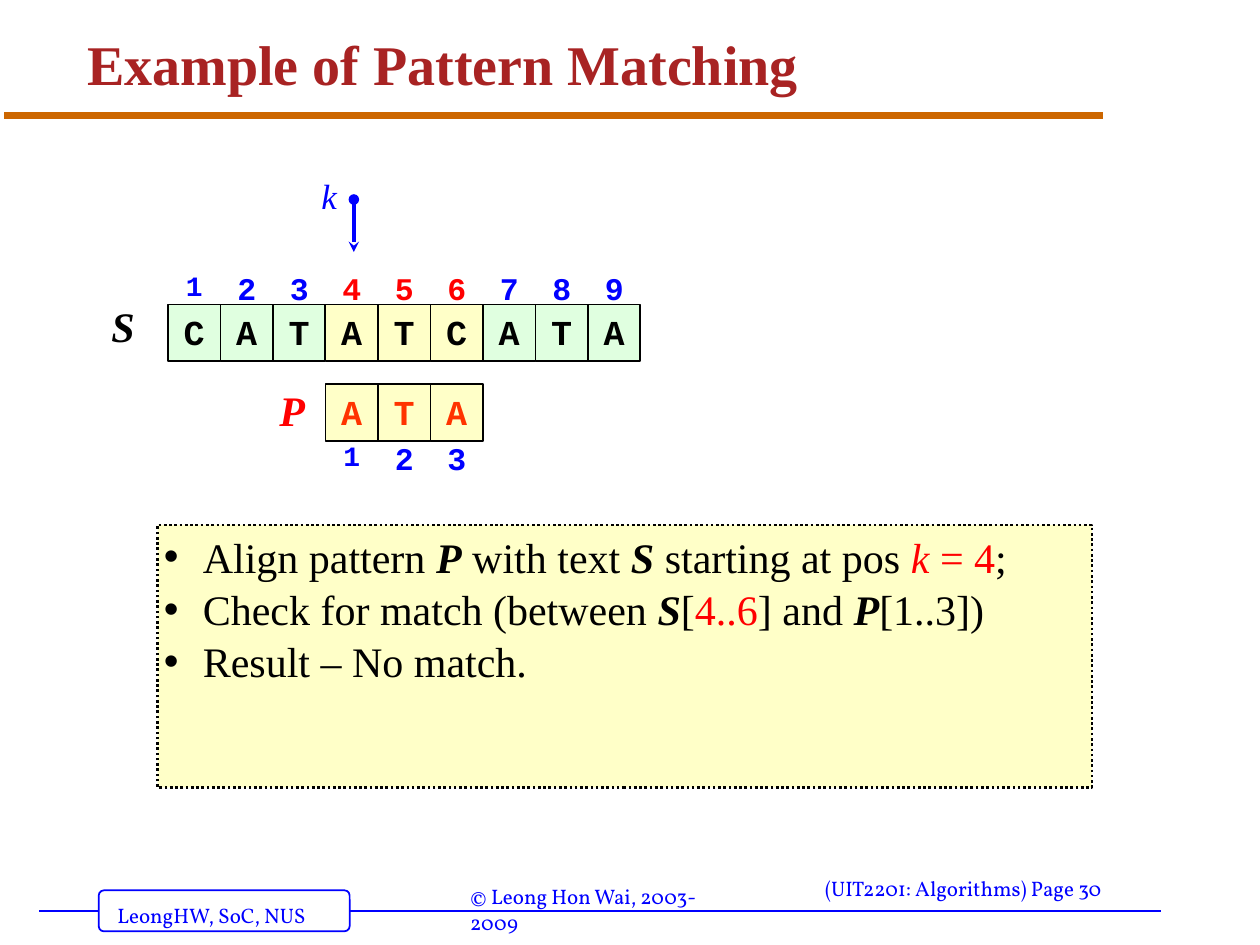
from lxml.etree import SubElement
from pptx import Presentation
from pptx.dml.color import RGBColor
from pptx.enum.dml import MSO_LINE
from pptx.enum.shapes import MSO_CONNECTOR, MSO_SHAPE
from pptx.enum.text import MSO_ANCHOR, MSO_AUTO_SIZE, PP_ALIGN
from pptx.oxml.ns import qn
from pptx.util import Inches, Pt

BLACK = RGBColor(0x00, 0x00, 0x00)
WHITE = RGBColor(0xFF, 0xFF, 0xFF)
BLUE = RGBColor(0x00, 0x00, 0xFF)
RED = RGBColor(0xFF, 0x00, 0x00)
ORANGE = RGBColor(0xFF, 0x33, 0x00)
BROWN = RGBColor(0xCC, 0x66, 0x00)
MAROON = RGBColor(0xA8, 0x23, 0x23)
CREAM = RGBColor(0xFF, 0xFF, 0xC8)
MINT = RGBColor(0xE0, 0xFF, 0xE0)

SERIF, MONO, FOOT = "Times New Roman", "Courier New", "Vollkorn"
COLS, ROWS = 120, 90  # grid of the whole slide
CELL = 5  # columns per letter

# Run styles: b = bold, i = italic, r = red
POINTS = [
    [("Align pattern ", ""), ("P", "bi"), (" with text ", ""), ("S", "bi"),
     (" starting at pos ", ""), ("k ", "ir"), ("= 4", "r"), (";", "")],
    [("Check for match (between ", ""), ("S", "bi"), ("[", ""), ("4..6", "r"),
     ("] and ", ""), ("P", "bi"), ("[1..3])", "")],
    [("Result – No match.", "")],
]


class Page:
    def __init__(self, deck):
        self.wide, self.high = deck.slide_width, deck.slide_height
        self.slide = deck.slides.add_slide(deck.slide_layouts[1])
        self.shapes = self.slide.shapes

    def spot(self, x, y):
        return round(x * self.wide / COLS), round(y * self.high / ROWS)

    def area(self, x, y, w, h):
        return self.spot(x, y) + self.spot(w, h)

    def place(self, shape, *box):
        shape.left, shape.top, shape.width, shape.height = self.area(*box)

    def inset(self, frame, side, top=0.05):
        frame.margin_left = frame.margin_right = Inches(side)
        frame.margin_top = frame.margin_bottom = Inches(top)
        frame.auto_size = MSO_AUTO_SIZE.NONE
        frame.vertical_anchor = MSO_ANCHOR.TOP

    def style(self, font, face, size, color, bold=False, slant=False):
        font.name, font.size = face, Pt(size)
        font.bold, font.italic = bold, slant
        font.color.rgb = color

    def paint(self, shape, fill, edge, width):
        shape.fill.solid()
        shape.fill.fore_color.rgb = fill
        shape.line.color.rgb = edge
        shape.line.width = Pt(width)

    def letter(self, shape, text, *look, side=0.05, align=PP_ALIGN.LEFT):
        """Set one styled paragraph in a shape."""
        frame = shape.text_frame
        self.inset(frame, side)
        frame.word_wrap = True
        para = frame.paragraphs[0]
        para.text, para.alignment = text, align
        self.style(para.font, *look)

    def title(self, text, *box):
        shape = self.shapes.title
        self.place(shape, *box)
        self.letter(shape, text, SERIF, 32, MAROON, True, side=0.1)
        shape.text_frame.vertical_anchor = MSO_ANCHOR.BOTTOM
        shape.text_frame.paragraphs[0].line_spacing = 0.9

    def points(self, items, *box):
        shape = self.slide.placeholders[1]
        self.place(shape, *box)
        self.paint(shape, CREAM, BLACK, 1.5)
        shape.line.dash_style = MSO_LINE.ROUND_DOT
        frame = shape.text_frame
        self.inset(frame, 0.05)
        for n, item in enumerate(items):
            para = frame.add_paragraph() if n else frame.paragraphs[0]
            para.space_before, para.space_after = Pt(0), Pt(1)
            props = para._p.get_or_add_pPr()
            props.set("marL", str(Inches(0.31)))
            props.set("indent", str(-Inches(0.31)))
            for text, mode in item:
                run = para.add_run()
                run.text = text
                self.style(run.font, SERIF, 24, RED if "r" in mode else BLACK,
                           "b" in mode, "i" in mode)

    def label(self, text, box, *look, **more):
        self.letter(self.shapes.add_textbox(*self.area(*box)), text, *look, **more)

    def shape(self, kind, box, fill, edge):
        shape = self.shapes.add_shape(kind, *self.area(*box))
        shape.shadow.inherit = False
        self.paint(shape, fill, edge, 1)
        return shape

    def line(self, start, end, color, width, **ends):
        """Draw a line; ends may name headEnd and tailEnd marks."""
        line = self.shapes.add_connector(
            MSO_CONNECTOR.STRAIGHT, *self.spot(*start), *self.spot(*end))
        line.line.color.rgb = color
        line.line.width = Pt(width)
        props = line._element.spPr
        for tag, mark in ends.items():
            SubElement(props.get_or_add_ln(), qn("a:" + tag), type=mark)
        SubElement(props, qn("a:effectLst"))

    def row(self, word, x, y, top, ink, hits):
        """Draw a word in cells, with indexes at top; hits are marked."""
        for n, char in enumerate(word, 1):
            left = x + (n - 1) * CELL
            fill = CREAM if n in hits else MINT
            cell = self.shape(MSO_SHAPE.RECTANGLE, (left, y, CELL, 5.4), fill, BLACK)
            self.letter(cell, char, MONO, 20, ink, True, align=PP_ALIGN.CENTER)
            color = RED if n in hits and len(hits) < len(word) else BLUE
            self.label(str(n), (left, top, CELL, 4.8), MONO, 16 if n == 1 else 18,
                       color, True, align=PP_ALIGN.CENTER)


def main():
    deck = Presentation()
    deck.slide_width, deck.slide_height = Inches(10), Inches(7.5)
    page = Page(deck)

    page.line((3.75, 86.8), (110.6, 86.8), BLUE, 1)
    badge = page.shape(MSO_SHAPE.ROUNDED_RECTANGLE, (9.4, 84.8, 23.9, 3.9), WHITE, BLUE)
    badge.adjustments[0] = 0.125
    page.line((0.4, 11), (105, 11), BROWN, 4)
    for text, x, y, w in (("LeongHW, SoC, NUS", 10, 85.4, 21.4),
                          ("(UIT2201: Algorithms) Page 30", 77.4, 82.8, 30.1),
                          ("© Leong Hon Wai, 2003-2009", 43.6, 83.6, 28.1)):
        page.label(text, (x, y, w, 3.6), FOOT, 12, BLUE, side=0.1)

    page.title("Example of Pattern Matching", 7.1, 1.6, 102, 8.3)
    page.points(POINTS, 15, 50, 89, 25)

    page.row("ATA", 31, 36.6, 41.2, ORANGE, range(1, 4))
    page.label("P", (26, 36, 4, 6), SERIF, 24, RED, True, True)
    page.row("CATATCATA", 16, 29, 25, BLACK, range(4, 7))
    page.label("S", (10, 28, 4, 6), SERIF, 24, BLACK, True, True)

    page.line((33.7, 19), (33.7, 24), BLUE, 2, headEnd="oval", tailEnd="stealth")
    page.label("k", (30, 16, 2.7, 5.2), SERIF, 20, BLUE, False, True)

    deck.save("out.pptx")


if __name__ == "__main__":
    main()
